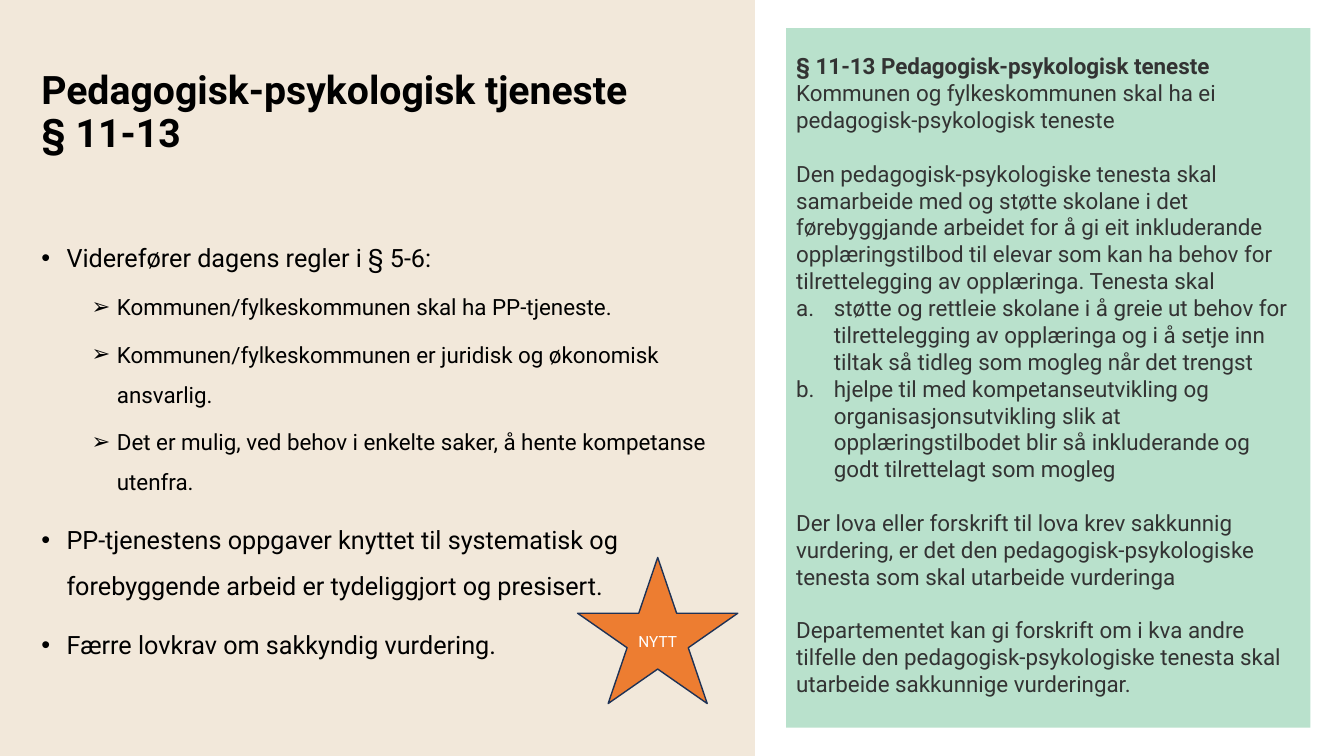
from lxml.etree import SubElement
from pptx import Presentation
from pptx.dml.color import RGBColor
from pptx.enum.shapes import MSO_SHAPE
from pptx.enum.text import MSO_ANCHOR, MSO_AUTO_SIZE, PP_ALIGN
from pptx.oxml.ns import qn
from pptx.util import Pt

SAND = RGBColor(0xF2, 0xE8, 0xDA)
MINT = RGBColor(0xB9, 0xE1, 0xCC)
ORANGE = RGBColor(0xED, 0x7D, 0x31)
NAVY = RGBColor(0x1E, 0x32, 0x56)
BLACK = RGBColor(0, 0, 0)
GREY = RGBColor(0x33, 0x33, 0x33)
WHITE = RGBColor(0xFF, 0xFF, 0xFF)
FONT = "Roboto"
LAW_LINE = 19.2

TITLE = "Pedagogisk-psykologisk tjeneste § 11-13"
SUMMARY = [
    (0, "Viderefører dagens regler i § 5-6:"),
    (1, "Kommunen/fylkeskommunen skal ha PP-tjeneste."),
    (1, "Kommunen/fylkeskommunen er juridisk og økonomisk ansvarlig."),
    (1, "Det er mulig, ved behov i enkelte saker, å hente kompetanse utenfra."),
    (0, "PP-tjenestens oppgaver knyttet til systematisk og forebyggende arbeid "
        "er tydeliggjort og presisert."),
    (0, "Færre lovkrav om sakkyndig vurdering."),
]
LAW = [
    ("heading", "§ 11-13 Pedagogisk-psykologisk teneste"),
    ("follow", "Kommunen og fylkeskommunen skal ha ei pedagogisk-psykologisk teneste"),
    ("section", "Den pedagogisk-psykologiske tenesta skal samarbeide med og støtte "
     "skolane i det førebyggjande arbeidet for å gi eit inkluderande "
     "opplæringstilbod til elevar som kan ha behov for tilrettelegging av "
     "opplæringa. Tenesta skal"),
    ("item", "støtte og rettleie skolane i å greie ut behov for tilrettelegging av "
     "opplæringa og i å setje inn tiltak så tidleg som mogleg når det trengst"),
    ("item", "hjelpe til med kompetanseutvikling og organisasjonsutvikling slik at "
     "opplæringstilbodet blir så inkluderande og godt tilrettelagt som mogleg"),
    ("section", "Der lova eller forskrift til lova krev sakkunnig vurdering, er det "
     "den pedagogisk-psykologiske tenesta som skal utarbeide vurderinga"),
    ("section", "Departementet kan gi forskrift om i kva andre tilfelle den "
     "pedagogisk-psykologiske tenesta skal utarbeide sakkunnige vurderingar."),
]


def place(shape, left, top, width, height):
    shape.left, shape.top = Pt(left), Pt(top)
    shape.width, shape.height = Pt(width), Pt(height)


def add_filled(page, kind, bounds, color):
    shape = page.shapes.add_shape(kind, *map(Pt, bounds))
    shape.shadow.inherit = False
    shape.fill.solid()
    shape.fill.fore_color.rgb = color
    shape.line.fill.background()
    return shape


def add_span(para, text, size, color, bold=False):
    span = para.add_run()
    span.text = text
    span.font.name = FONT
    span.font.size = Pt(size)
    span.font.bold = bold
    span.font.color.rgb = color


def add_marker(para, margin, hanging, tag, **attributes):
    properties = para._p.get_or_add_pPr()
    properties.set("marL", str(Pt(margin)))
    properties.set("indent", str(-Pt(hanging)))
    SubElement(properties, qn("a:buFont"), typeface="Arial")
    SubElement(properties, qn(tag), **attributes)


def paragraphs(frame, entries):
    for index, entry in enumerate(entries):
        para = frame.add_paragraph() if index else frame.paragraphs[0]
        yield index, para, entry


def fill_title(title):
    place(title, 22.32, 28.8, 447.84, 104.4)
    frame = title.text_frame
    frame.word_wrap = True
    frame.auto_size = MSO_AUTO_SIZE.NONE
    frame.vertical_anchor = MSO_ANCHOR.MIDDLE
    para = frame.paragraphs[0]
    para.alignment = PP_ALIGN.LEFT
    para.line_spacing = 0.9
    add_span(para, TITLE, 28, BLACK, bold=True)


def fill_summary(body):
    place(body, 22.32, 159, 509.04, 352)
    frame = body.text_frame
    frame.word_wrap = True
    frame.auto_size = MSO_AUTO_SIZE.NONE
    frame.vertical_anchor = MSO_ANCHOR.TOP
    for index, para, (level, text) in paragraphs(frame, SUMMARY):
        para.level = level
        add_marker(para, 18 + 36 * level, 18, "a:buChar", char="•➢"[level])
        para.line_spacing = 1.5
        para.space_before = Pt((10, 5)[level] if index else 0)
        add_span(para, text, (18, 16)[level], BLACK)


def add_law_panel(page):
    panel = add_filled(page, MSO_SHAPE.RECTANGLE, (561.6, 20.16, 374.4, 499.68), MINT)
    frame = panel.text_frame
    frame.word_wrap = True
    frame.vertical_anchor = MSO_ANCHOR.TOP
    frame.margin_top = Pt(17.3)
    for index, para, (role, text) in paragraphs(frame, LAW):
        para.alignment = PP_ALIGN.LEFT
        if role == "item":
            add_marker(para, 27, 27, "a:buAutoNum", type="alphaLcPeriod")
        para.space_before = Pt(LAW_LINE if role == "section" else 0)
        add_span(para, text, 16, GREY, bold=role == "heading")


def add_star(page):
    star = add_filled(page, MSO_SHAPE.STAR_5_POINT, (412.56, 398.16, 114.48, 104.4), ORANGE)
    star.line.color.rgb = NAVY
    star.line.width = Pt(1)
    frame = star.text_frame
    frame.word_wrap = True
    frame.vertical_anchor = MSO_ANCHOR.MIDDLE
    para = frame.paragraphs[0]
    para.alignment = PP_ALIGN.CENTER
    add_span(para, "NYTT", 11, WHITE)


def main():
    deck = Presentation()
    deck.slide_width, deck.slide_height = Pt(960), Pt(540)
    page = deck.slides.add_slide(deck.slide_layouts[1])
    title, body = page.shapes.title, page.placeholders[1]
    backdrop = add_filled(page, MSO_SHAPE.RECTANGLE, (0, 0, 539.28, 540), SAND)
    title.element.addprevious(backdrop.element)
    fill_title(title)
    fill_summary(body)
    add_law_panel(page)
    add_star(page)
    deck.save("out.pptx")


if __name__ == "__main__":
    main()
